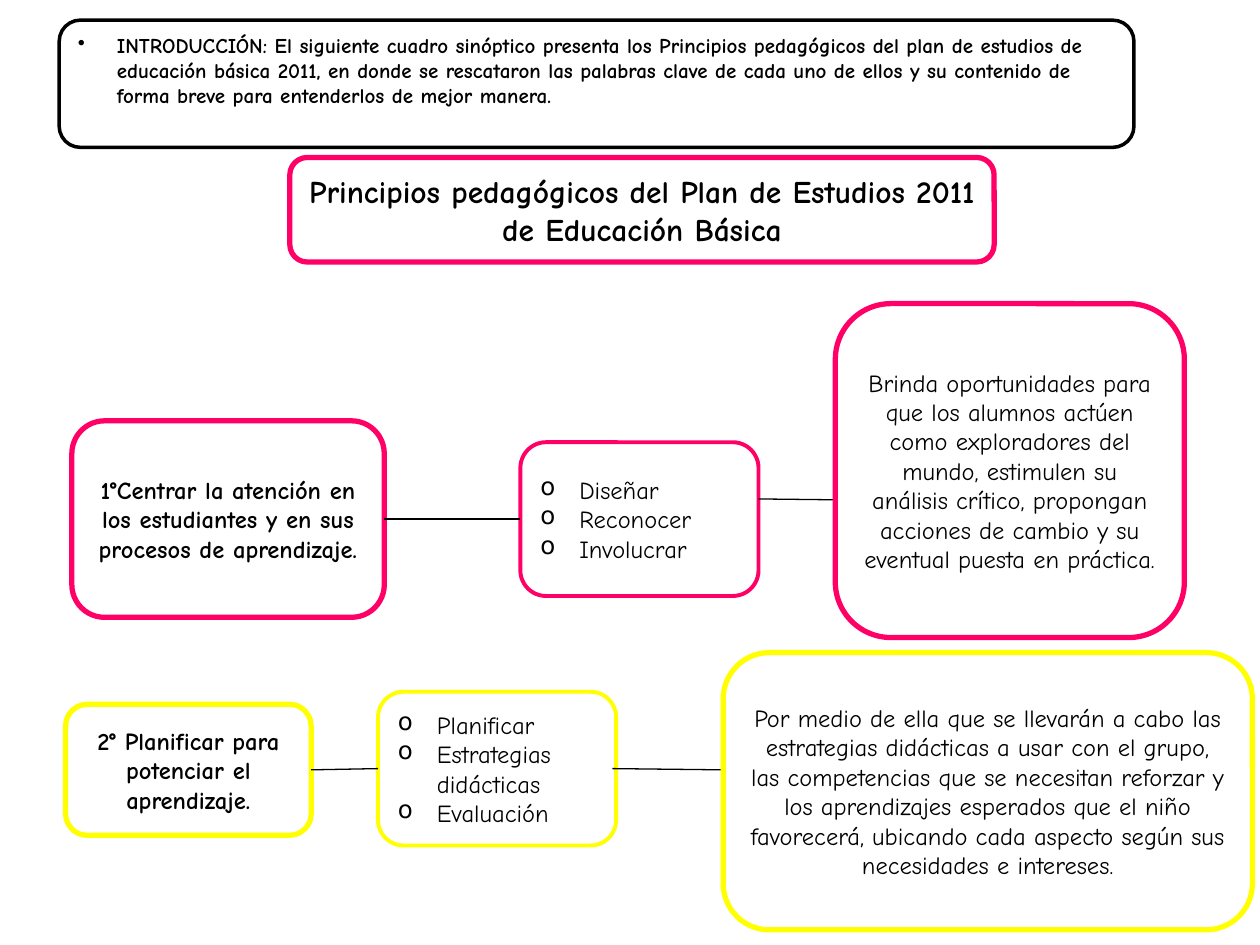
from dataclasses import dataclass

from lxml.etree import SubElement
from pptx import Presentation
from pptx.dml.color import RGBColor
from pptx.enum.shapes import MSO_CONNECTOR, MSO_SHAPE
from pptx.enum.text import MSO_ANCHOR, PP_ALIGN
from pptx.oxml.ns import qn
from pptx.util import Inches, Pt


@dataclass(frozen=True)
class Theme:
    font: str = "Comic Neue"
    black: RGBColor = RGBColor(0, 0, 0)
    white: RGBColor = RGBColor(255, 255, 255)
    pink: RGBColor = RGBColor(255, 0, 102)
    yellow: RGBColor = RGBColor(255, 255, 0)
    intro: int = 12
    title: int = 18
    body: int = 14
    thin: float = 0.75
    edge: float = 2
    list_edge: float = 2.25
    bold_edge: float = 3


THEME = Theme()


def add_bullet(para, mark):
    props = para._p.get_or_add_pPr()
    props.set("marL", str(Inches(0.31)))
    props.set("indent", str(-Inches(0.31)))
    SubElement(props, qn("a:buChar")).set("char", mark)


def add_box(slide, place, text, color, width=THEME.bold_edge,
            size=THEME.body, bold=False, mark=None, anchor=MSO_ANCHOR.MIDDLE):
    box = slide.shapes.add_shape(MSO_SHAPE.ROUNDED_RECTANGLE, *map(Inches, place))
    box.shadow.inherit = False
    box.fill.solid()
    box.fill.fore_color.rgb = THEME.white
    box.line.color.rgb = color
    box.line.width = Pt(width)
    frame = box.text_frame
    frame.word_wrap = True
    frame.vertical_anchor = anchor
    frame.text = text
    for para in frame.paragraphs:
        para.alignment = PP_ALIGN.LEFT if mark else PP_ALIGN.CENTER
        if mark:
            add_bullet(para, mark)
        for run in para.runs:
            run.font.name = THEME.font
            run.font.size = Pt(size)
            run.font.bold = bold
            run.font.color.rgb = THEME.black


def add_list(slide, place, items, color):
    add_box(slide, place, "\n".join(items), color, THEME.list_edge, mark="o")


def add_link(slide, *ends):
    link = slide.shapes.add_connector(MSO_CONNECTOR.STRAIGHT, *map(Inches, ends))
    link.line.color.rgb = THEME.black
    link.line.width = Pt(THEME.thin)
    SubElement(link._element.spPr, qn("a:effectLst"))


def main():
    deck = Presentation()
    deck.slide_width, deck.slide_height = Inches(10), Inches(7.5)
    slide = deck.slides.add_slide(deck.slide_layouts[6])

    add_box(slide, (0.47, 0.16, 8.53, 1.01),
            "INTRODUCCIÓN: El siguiente cuadro sinóptico presenta los Principios "
            "pedagógicos del plan de estudios de educación básica 2011, en donde se "
            "rescataron las palabras clave de cada uno de ellos y su contenido de "
            "forma breve para entenderlos de mejor manera.",
            THEME.black, THEME.edge, THEME.intro, True, "•", MSO_ANCHOR.TOP)
    add_box(slide, (2.3, 1.25, 5.59, 0.83),
            "Principios pedagógicos del Plan de Estudios 2011 de Educación Básica",
            THEME.pink, size=THEME.title, bold=True)

    add_box(slide, (0.57, 3.34, 2.48, 1.56),
            "1°Centrar la atención en los estudiantes y en sus procesos de aprendizaje.",
            THEME.pink, bold=True)
    add_list(slide, (4.13, 3.51, 1.89, 1.22),
             ("Diseñar", "Reconocer", "Involucrar"), THEME.pink)
    add_link(slide, 3.05, 4.12, 4.13, 4.12)
    add_link(slide, 6.02, 3.96, 6.9, 3.97)
    add_box(slide, (6.63, 2.41, 2.77, 2.65),
            "Brinda oportunidades para que los alumnos actúen como exploradores del "
            "mundo, estimulen su análisis crítico, propongan acciones de cambio y su "
            "eventual puesta en práctica.", THEME.pink)

    add_box(slide, (0.52, 5.59, 1.95, 1.04),
            "2° Planificar para potenciar el aprendizaje.", THEME.yellow, bold=True)
    add_list(slide, (3, 5.49, 1.89, 1.22),
             ("Planificar", "Estrategias didácticas", "Evaluación"), THEME.yellow)
    add_link(slide, 2.47, 6.11, 3, 6.1)
    add_link(slide, 4.86, 6.1, 5.74, 6.11)
    add_box(slide, (5.74, 5.18, 4.2, 2.2),
            "Por medio de ella que se llevarán a cabo las estrategias didácticas a "
            "usar con el grupo, las competencias que se necesitan reforzar y los "
            "aprendizajes esperados que el niño favorecerá, ubicando cada aspecto "
            "según sus necesidades e intereses.", THEME.yellow)

    deck.save("out.pptx")


if __name__ == "__main__":
    main()
